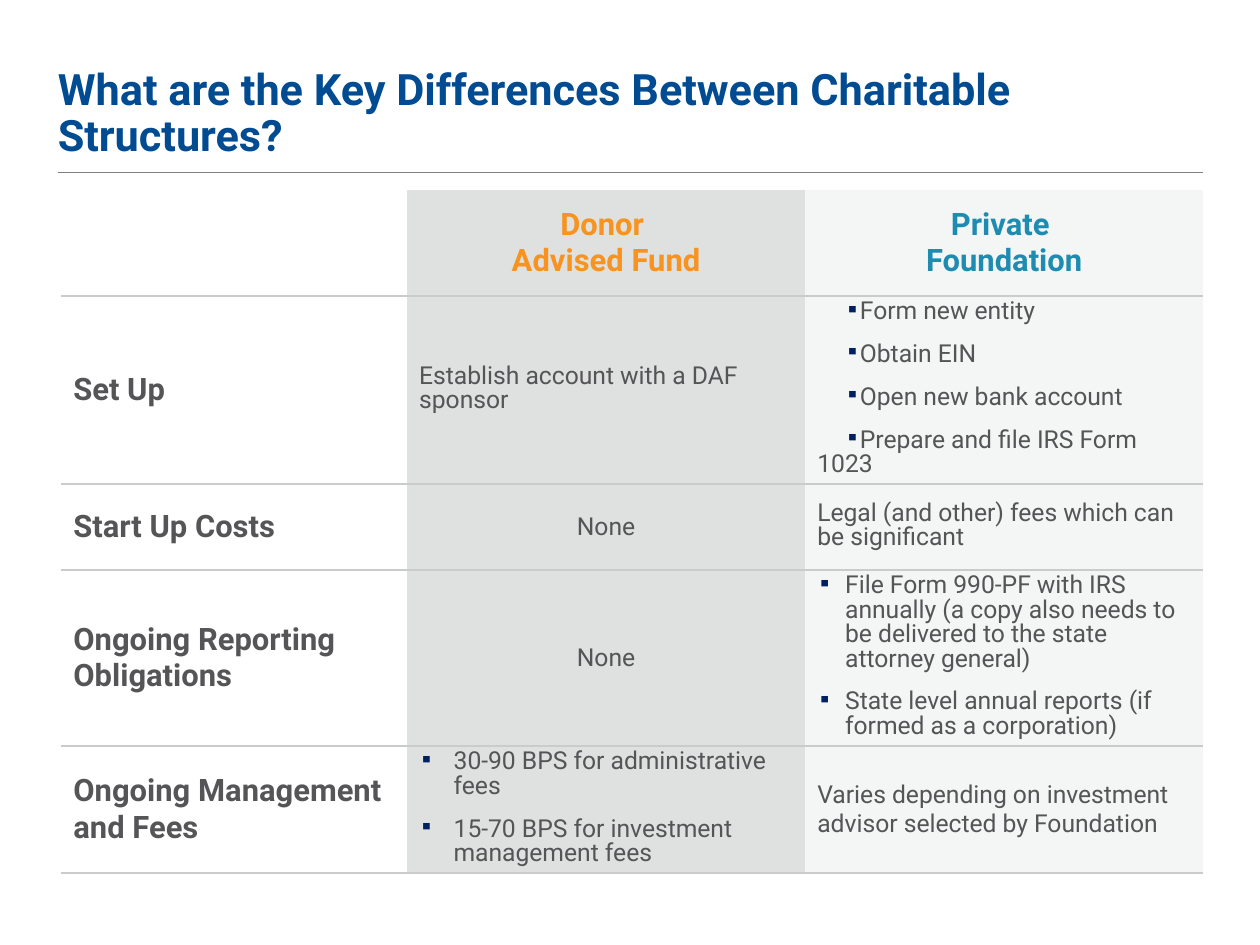
from dataclasses import dataclass

import pptx
import pptx.dml.color
import pptx.enum.shapes
import pptx.enum.text
import pptx.oxml
import pptx.oxml.ns
import pptx.util
from lxml import etree

Inches = pptx.util.Inches
Pt = pptx.util.Pt
CENTER = pptx.enum.text.PP_ALIGN.CENTER
LEFT = pptx.enum.text.PP_ALIGN.LEFT
MIDDLE = pptx.enum.text.MSO_ANCHOR.MIDDLE

FONT = "Roboto"
COLORS = {
    "title": "004B91", "rule": "808080", "border": "C9CBCC", "text": "555457",
    "fund": "F7931E", "foundation": "1E8CB1", "bullet": "002060",
    "fund_fill": "DFE0E0", "foundation_fill": "F4F5F5",
}
COLUMN_FILLS = (None, "fund_fill", "foundation_fill")
COLUMN_WIDTHS = (3.11, 3.58, 3.58)
ROW_HEIGHTS = (0.95, 1.57, 0.77, 1.45, 0.99)


@dataclass(frozen=True)
class Style:
    size: float = 16
    bold: bool = False
    color: str = "text"
    align: pptx.enum.text.PP_ALIGN = LEFT
    spacing: float | pptx.util.Length | None = None
    before: float = 0
    after: float = 0
    margin: float = 0
    indent: float = 0
    bullet: bool = False


@dataclass(frozen=True)
class CellText:
    style: Style
    lines: tuple[str, ...]


TIGHT = Pt(15.8)
TITLE = Style(size=28, bold=True, color="title", spacing=0.9)
FUND_HEAD = Style(size=20, bold=True, color="fund", align=CENTER)
FOUNDATION_HEAD = Style(size=20, bold=True, color="foundation", align=CENTER)
TOPIC = Style(size=20, bold=True)
BODY = Style(spacing=TIGHT, before=7.5, after=12)
LOOSE = Style(after=12)
NONE = Style(align=CENTER, after=12)
STEPS = Style(spacing=TIGHT, after=12, indent=0.25, bullet=True)
REPORTS = Style(spacing=TIGHT, after=12, margin=0.25, indent=-0.25, bullet=True)
FEES = Style(spacing=TIGHT, after=12, margin=0.31, indent=-0.31, bullet=True)

ROWS = (
    (None,
     CellText(FUND_HEAD, ("Donor \vAdvised Fund",)),
     CellText(FOUNDATION_HEAD, ("Private \vFoundation",))),
    (CellText(TOPIC, ("Set Up",)),
     CellText(BODY, ("Establish account with a DAF sponsor",)),
     CellText(STEPS, ("Form new entity", "Obtain EIN", "Open new bank account",
                      "Prepare and file IRS Form 1023"))),
    (CellText(TOPIC, ("Start Up Costs",)),
     CellText(NONE, ("None",)),
     CellText(BODY, ("Legal (and other) fees which can be significant",))),
    (CellText(TOPIC, ("Ongoing Reporting Obligations",)),
     CellText(NONE, ("None",)),
     CellText(REPORTS, (
         "File Form 990-PF with IRS annually (a copy also needs to be delivered "
         "to the state attorney general)",
         "State level annual reports (if formed as a corporation)"))),
    (CellText(TOPIC, ("Ongoing Management and Fees",)),
     CellText(FEES, ("30-90 BPS for administrative fees",
                     "15-70 BPS for investment management fees")),
     CellText(LOOSE, ("Varies depending on investment advisor selected by Foundation",))),
)


def rgb(name: str) -> pptx.dml.color.RGBColor:
    return pptx.dml.color.RGBColor.from_string(COLORS[name])


def xml(body: str):
    """Parse one element whose tag carries the a: prefix."""
    tag, rest = body[1:].split(" ", 1)
    return pptx.oxml.parse_xml(f"<{tag} {pptx.oxml.ns.nsdecls('a')} {rest}")


def write_paragraph(p, text: str, *, style: Style) -> None:
    p.alignment = style.align
    p.line_spacing = style.spacing
    p.space_before = Pt(style.before)
    p.space_after = Pt(style.after)
    for i, part in enumerate(text.split("\v")):
        if i:
            p.add_line_break()
        r = p.add_run()
        r.text = part
        r.font.name = FONT
        r.font.size = Pt(style.size)
        r.font.bold = style.bold
        r.font.color.rgb = rgb(style.color)
    pPr = p._p.get_or_add_pPr()
    pPr.set("marL", str(Inches(style.margin)))
    pPr.set("indent", str(Inches(style.indent)))
    if style.bullet:
        pPr.append(xml(f'<a:buClr ><a:srgbClr val="{COLORS["bullet"]}"/></a:buClr>'))
        pPr.append(xml('<a:buSzPct val="80000"/>'))
        pPr.append(xml('<a:buChar char="▪"/>'))
    else:
        pPr.append(xml("<a:buNone />"))


def write_lines(tf, lines: tuple[str, ...], *, style: Style) -> None:
    tf.word_wrap = True
    for i, line in enumerate(lines):
        p = tf.add_paragraph() if i else tf.paragraphs[0]
        write_paragraph(p, line, style=style)


def set_borders(cell, *, top: bool) -> None:
    """Rule the cell below and, if asked, above; clear its sides."""
    ruled = {"lnL": False, "lnR": False, "lnT": top, "lnB": True}
    tcPr = cell._tc.get_or_add_tcPr()
    for i, (side, shown) in enumerate(ruled.items()):
        paint = (f'<a:solidFill><a:srgbClr val="{COLORS["border"]}"/></a:solidFill>'
                 if shown else "<a:noFill/>")
        tcPr.insert(i, xml(f'<a:{side} w="{Pt(1.5)}">{paint}</a:{side}>'))


def add_title(slide) -> None:
    sp = slide.shapes.title
    sp.left, sp.top = Inches(0.52), Inches(0.59)
    sp.width, sp.height = Inches(10.3), Inches(0.86)
    tf = sp.text_frame
    tf.auto_size = pptx.enum.text.MSO_AUTO_SIZE.NONE
    tf.vertical_anchor = pptx.enum.text.MSO_ANCHOR.BOTTOM
    tf.margin_left = tf.margin_right = tf.margin_top = tf.margin_bottom = 0
    write_lines(tf, ("What are the Key Differences Between Charitable Structures?",),
                style=TITLE)


def add_title_rule(slide) -> None:
    line = slide.shapes.add_connector(
        pptx.enum.shapes.MSO_CONNECTOR.STRAIGHT,
        Inches(0.52), Inches(1.55), Inches(10.82), Inches(1.55))
    line.line.color.rgb = rgb("rule")
    line.line.width = Pt(0.25)
    etree.SubElement(line._element.spPr, pptx.oxml.ns.qn("a:effectLst"))


def add_comparison(slide) -> None:
    table = slide.shapes.add_table(
        len(ROWS), len(COLUMN_WIDTHS), Inches(0.55), Inches(1.71),
        Inches(sum(COLUMN_WIDTHS)), Inches(sum(ROW_HEIGHTS))).table
    table.first_row = table.horz_banding = False
    for column, width in zip(table.columns, COLUMN_WIDTHS):
        column.width = Inches(width)
    for i, (row, height, contents) in enumerate(zip(table.rows, ROW_HEIGHTS, ROWS)):
        row.height = Inches(height)
        for cell, content, fill in zip(row.cells, contents, COLUMN_FILLS):
            cell.vertical_anchor = MIDDLE
            cell.margin_left = cell.margin_right = Inches(0.11)
            cell.margin_top = cell.margin_bottom = Inches(0.05)
            if fill:
                cell.fill.solid()
                cell.fill.fore_color.rgb = rgb(fill)
            else:
                cell.fill.background()
            set_borders(cell, top=i > 0)
            if content:
                write_lines(cell.text_frame, content.lines, style=content.style)


def main() -> None:
    prs = pptx.Presentation()
    prs.slide_width, prs.slide_height = Inches(11.33), Inches(8.5)
    slide = prs.slides.add_slide(prs.slide_layouts[5])
    add_title_rule(slide)
    add_title(slide)
    add_comparison(slide)
    prs.save("out.pptx")


if __name__ == "__main__":
    main()
